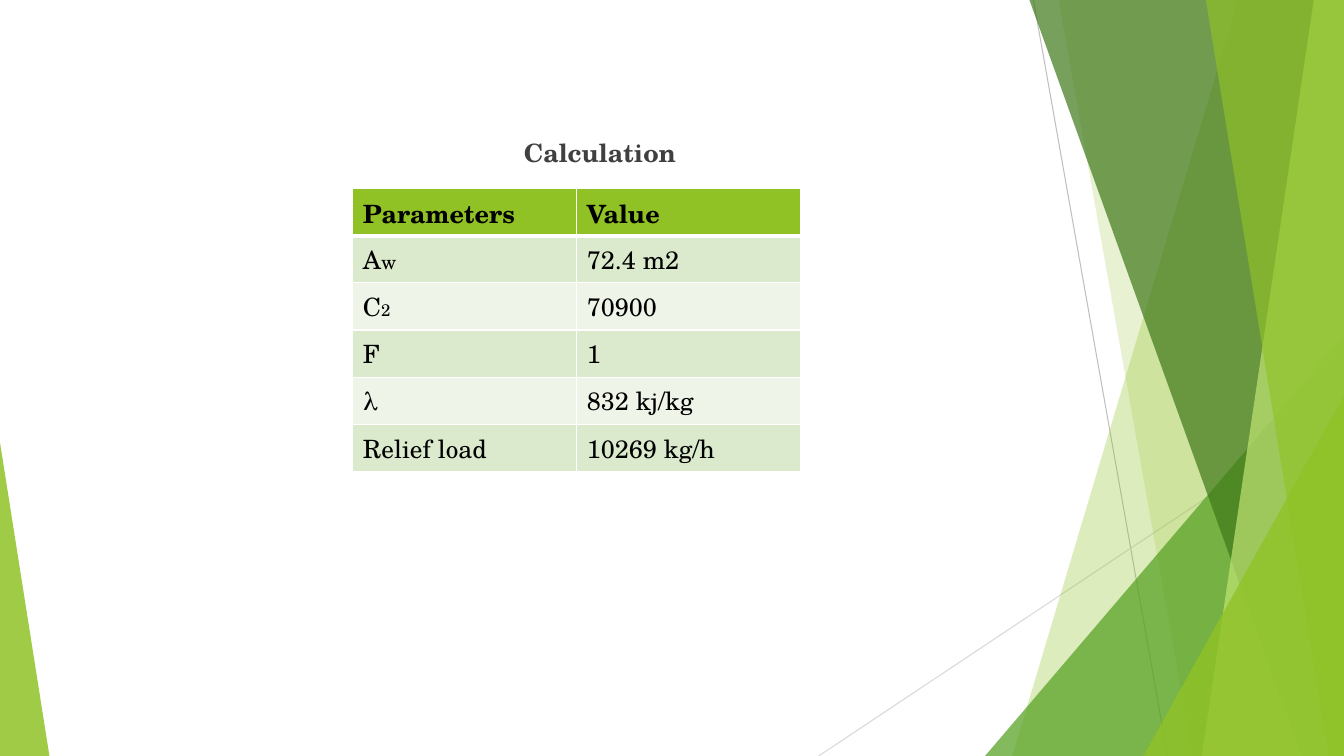
import pptx
import pptx.dml.color
import pptx.enum.shapes
import pptx.enum.text
import pptx.oxml
import pptx.oxml.ns
import pptx.util
from lxml import etree

Inches = pptx.util.Inches
WIDTH, HEIGHT = 13.33, 7.5
GREEN, WHITE = "90C226", "FFFFFF"


def color(code):
    return pptx.dml.color.RGBColor.from_string(code)


class CalculationSlide:
    font_name = "TeX Gyre Schola"
    text_size = 18

    def __init__(self, deck):
        self.slide = deck.slides.add_slide(deck.slide_layouts[6])
        self.shapes = self.slide.shapes
        self.slide.background.fill.solid()
        self.slide.background.fill.fore_color.rgb = color(WHITE)

    def paint(self, shape, code, opacity):
        shape.shadow.inherit = False
        shape.line.fill.background()
        shape.fill.solid()
        shape.fill.fore_color.rgb = color(code)
        tint = shape.fill._xPr.find(".//" + pptx.oxml.ns.qn("a:srgbClr"))
        etree.SubElement(tint, pptx.oxml.ns.qn("a:alpha"), val=str(opacity * 1000))

    def ray(self, start, end, code):
        ray = self.shapes.add_connector(
            pptx.enum.shapes.MSO_CONNECTOR.STRAIGHT, *map(Inches, start + end))
        ray.line.color.rgb = color(code)
        ray.line.width = pptx.util.Pt(0.75)
        etree.SubElement(ray._element.spPr, pptx.oxml.ns.qn("a:effectLst"))

    def band(self, top_left, bottom_left, code, opacity):
        outline = self.shapes.build_freeform(Inches(top_left), 0)
        corners = [(WIDTH, 0), (WIDTH, HEIGHT), (bottom_left, HEIGHT)]
        outline.add_line_segments([(Inches(x), Inches(y)) for x, y in corners], close=True)
        self.paint(outline.convert_to_shape(), code, opacity)

    def wedge(self, left, top, width, peak, code, opacity):
        wedge = self.shapes.add_shape(
            pptx.enum.shapes.MSO_SHAPE.ISOSCELES_TRIANGLE,
            *map(Inches, (left, top, width, HEIGHT - top)))
        wedge.adjustments[0] = peak
        self.paint(wedge, code, opacity)

    def style(self, run, code, bold, size=text_size):
        run.font.name = self.font_name
        run.font.size = pptx.util.Pt(size)
        run.font.bold = bold
        run.font.color.rgb = color(code)

    def heading(self, wording, left, top, width, height):
        frame = self.shapes.add_textbox(*map(Inches, (left, top, width, height))).text_frame
        frame.word_wrap = True
        frame.vertical_anchor = pptx.enum.text.MSO_ANCHOR.MIDDLE
        frame.text = wording
        frame.paragraphs[0].alignment = pptx.enum.text.PP_ALIGN.CENTER
        self.style(frame.paragraphs[0].runs[0], "404040", True)

    def border(self, cell, side, points):
        properties = cell._tc.get_or_add_tcPr()
        properties.append(pptx.oxml.parse_xml(
            f'<a:ln{side} {pptx.oxml.ns.nsdecls("a")} w="{pptx.util.Pt(points)}">'
            f'<a:solidFill><a:srgbClr val="{WHITE}"/></a:solidFill></a:ln{side}>'))

    def table(self, rows, left, top, width, height):
        grid = self.shapes.add_table(
            len(rows), len(rows[0]), *map(Inches, (left, top, width, height))).table
        for row, entries in enumerate(rows):
            fill = GREEN if row == 0 else ("EEF4E8", "DBE9CD")[row % 2]
            for column, entry in enumerate(entries):
                cell = grid.cell(row, column)
                for side in "LRTB":
                    under_header = (row, side) in ((0, "B"), (1, "T"))
                    self.border(cell, side, 3 if under_header else 1)
                cell.fill.solid()
                cell.fill.fore_color.rgb = color(fill)
                parts = [(entry, self.text_size)] if isinstance(entry, str) else entry
                for wording, size in parts:
                    run = cell.text_frame.paragraphs[0].add_run()
                    run.text = wording
                    self.style(run, "000000", row == 0, size)


def main():
    deck = pptx.Presentation()
    deck.slide_width, deck.slide_height = Inches(WIDTH), Inches(HEIGHT)
    page = CalculationSlide(deck)

    page.ray((10.25, 0), (11.58, HEIGHT), "BFBFBF")
    page.ray((WIDTH, 4.03), (8.12, HEIGHT), "D9D9D9")
    page.band(12.28, 10.04, GREEN, 30)
    page.band(10.5, 11.83, GREEN, 20)
    page.wedge(9.77, 3.33, 3.56, 1, "54A021", 72)
    page.band(10.21, 12.91, "3F7819", 70)
    page.band(13.03, 11.92, "C0E474", 70)
    page.band(11.96, 13.18, GREEN, 65)
    page.wedge(11.34, 3.93, 1.99, 1, GREEN, 80)
    page.wedge(0, 4.39, 0.49, 0, GREEN, 85)

    page.heading("Calculation", 4.45, 1.26, 3, 0.5)
    page.table([
        ("Parameters", "Value"),
        ([("A", 18), ("w", 14)], "72.4 m2"),
        ([("C", 18), ("2", 12)], "70900"),
        ("F", "1"),
        ("λ", "832 kj/kg"),
        ("Relief load", "10269 kg/h"),
    ], 3.5, 1.87, 4.44, 2.81)

    deck.save("out.pptx")


if __name__ == "__main__":
    main()
